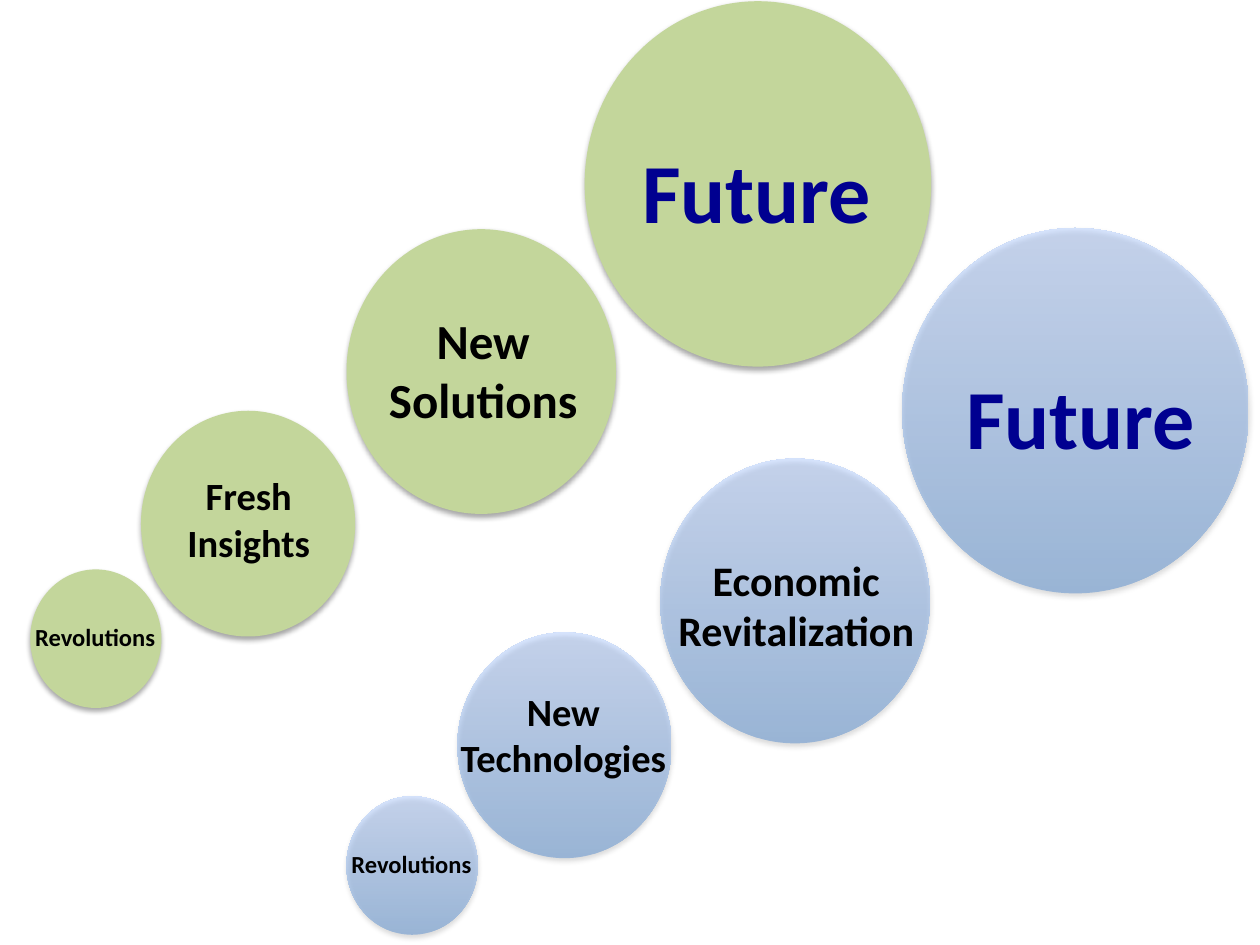
from lxml import etree
from pptx import Presentation
from pptx.dml.color import RGBColor
from pptx.enum.shapes import MSO_SHAPE as SHAPE
from pptx.enum.text import MSO_ANCHOR, MSO_AUTO_SIZE, PP_ALIGN as ALIGN
from pptx.oxml.ns import qn
from pptx.util import Pt

COLORS = {
    "green": "C3D69B",
    "blue_low": "3F80CE",
    "blue_high": "A4C4FF",
    "black": "000000",
    "navy": "000090",
}
# Four growing steps, shared by both chains
STEP_SIZES = [(75, 79.2), (122.4, 129), (154, 162.7), (198, 208.8)]

# Per step: circle corner, label box within the circle, lines, text size, options
BLUE_CHAIN = [
    ((198, 455), (-4.3, 26.6, 84.2, 24.5), ["Revolutions"], 14, {"wrap": False, "align": ALIGN.LEFT}),
    ((261.4, 361.4), (-7.2, 28.1, 135.4, 60.5), ["New", "Technologies"], 22, {"wrap": False}),
    ((377.3, 262.1), (1.4, 51.1, 152.6, 65.5), ["Economic Revitalization"], 24, {}),
    ((515.5, 130.3), (29.5, 74.9, 165.6, 65.5), ["Future"], 48, {"color": "navy", "align": ALIGN.LEFT}),
]
GREEN_CHAIN = [
    ((17.3, 325.4), (-5, 26.6, 84.2, 24.5), ["Revolutions"], 14, {"wrap": False}),
    ((80.6, 234.7), (18.7, 31.7, 85.7, 60.5), ["Fresh", "Insights"], 22, {"wrap": False, "patch": True}),
    ((198, 131), (12.2, 43.2, 131.8, 74.9), ["New Solutions"], 28, {"patch": True}),
    ((334.1, 0.7), (25.9, 75.6, 156.2, 65.5), ["Future"], 48,
     {"color": "navy", "align": ALIGN.LEFT, "patch": True}),
]


def rgb(name):
    return RGBColor.from_string(COLORS[name])


def fill_green(shape):
    shape.fill.solid()
    shape.fill.fore_color.rgb = rgb("green")


def fill_blue(shape):
    """Translucent gradient, darker at the bottom."""
    shape.fill.gradient()
    shape.fill.gradient_angle = 90
    for stop, name in zip(shape.fill.gradient_stops, ("blue_low", "blue_high")):
        stop.color.rgb = rgb(name)
    for color in shape._element.spPr.iter(qn("a:srgbClr")):
        etree.SubElement(color, qn("a:alpha"), val="41000")


def add_soft_shadow(shape):
    shape.shadow.inherit = False
    effects = shape._element.spPr.find(qn("a:effectLst"))
    shadow = etree.SubElement(effects, qn("a:outerShdw"), blurRad=str(Pt(3.1)),
                              dist=str(Pt(1.8)), dir="5400000", rotWithShape="0")
    color = etree.SubElement(shadow, qn("a:srgbClr"), val=COLORS["black"])
    etree.SubElement(color, qn("a:alpha"), val="35000")


def add_label(group, box, lines, size, color="black", align=ALIGN.CENTER,
              wrap=True, patch=False):
    """Text box, or a green rectangle when patch is set."""
    place = [Pt(v) for v in box]
    if patch:
        label = group.shapes.add_shape(SHAPE.RECTANGLE, *place)
        label.shadow.inherit = False
        fill_green(label)
        label.line.fill.background()
    else:
        label = group.shapes.add_textbox(*place)
    frame = label.text_frame
    frame.text = "\n".join(lines)
    frame_format = {"word_wrap": wrap, "vertical_anchor": MSO_ANCHOR.TOP,
                    "auto_size": MSO_AUTO_SIZE.SHAPE_TO_FIT_TEXT}
    for key, value in frame_format.items():
        setattr(frame, key, value)
    font_format = {"name": "Calibri", "size": Pt(size), "bold": True}
    for paragraph in frame.paragraphs:
        paragraph.alignment = align
        for run in paragraph.runs:
            for key, value in font_format.items():
                setattr(run.font, key, value)
            run.font.color.rgb = rgb(color)


def add_ball(slide, box, fill, label_box, lines, size, options):
    left, top, width, height = box
    group = slide.shapes.add_group_shape()
    ball = group.shapes.add_shape(SHAPE.OVAL, *(Pt(v) for v in box))
    fill(ball)
    ball.line.fill.background()
    add_soft_shadow(ball)
    dx, dy, label_width, label_height = label_box
    add_label(group, (left + dx, top + dy, label_width, label_height),
              lines, size, **options)


def add_chain(slide, steps, fill):
    for ball_size, (corner, *label) in zip(STEP_SIZES, steps):
        add_ball(slide, corner + ball_size, fill, *label)


def main():
    deck = Presentation()
    deck.slide_width, deck.slide_height = Pt(720), Pt(540)
    slide = deck.slides.add_slide(deck.slide_layouts[6])
    add_chain(slide, BLUE_CHAIN, fill_blue)
    add_chain(slide, GREEN_CHAIN, fill_green)
    deck.save("out.pptx")


if __name__ == "__main__":
    main()
